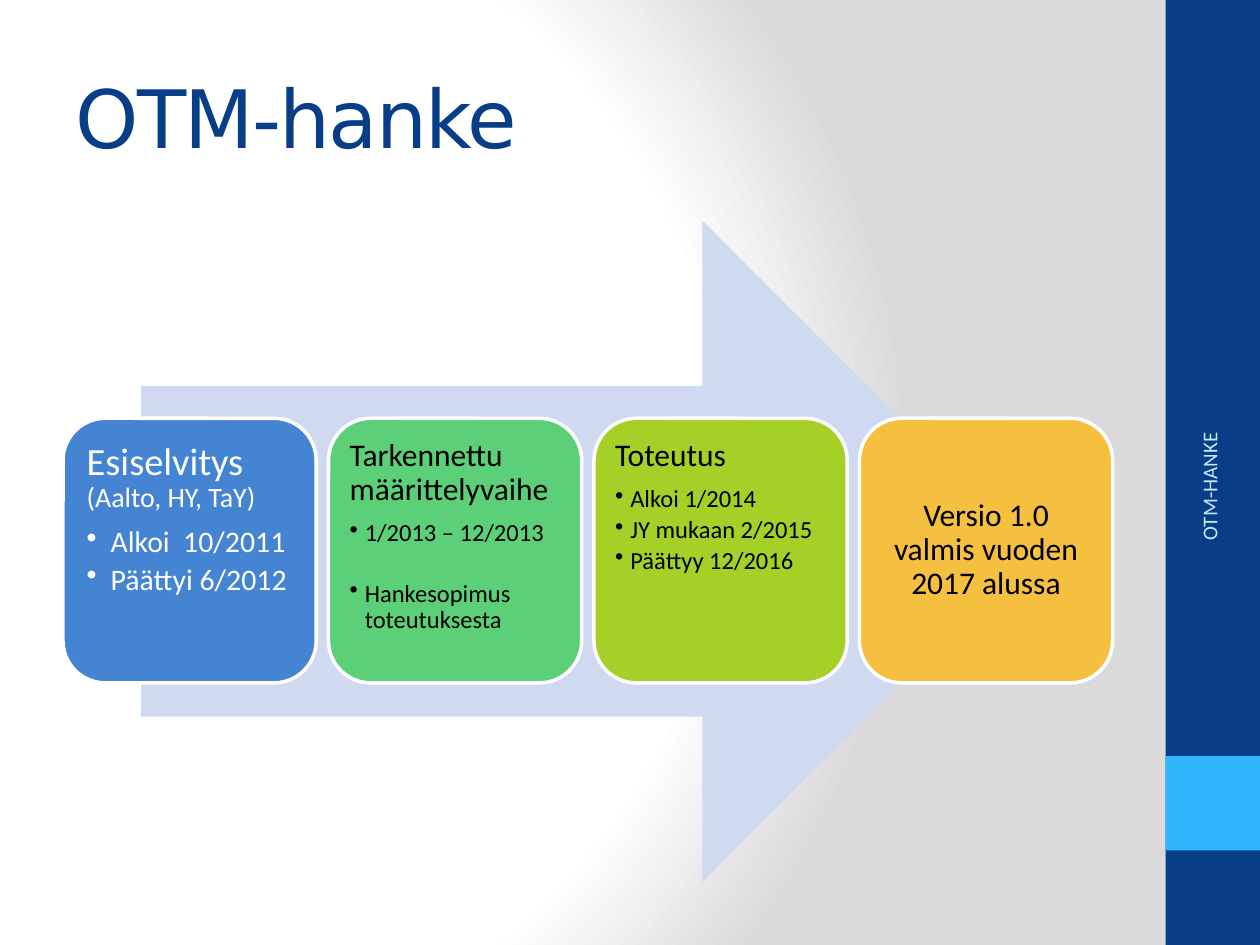
import lxml.etree
import pptx
import pptx.dml.color
import pptx.enum.shapes
import pptx.enum.text
import pptx.oxml.ns
import pptx.util

Inches, Pt = pptx.util.Inches, pptx.util.Pt
RGB = pptx.dml.color.RGBColor
SHAPES = pptx.enum.shapes.MSO_SHAPE
ALIGN = pptx.enum.text.PP_ALIGN
ANCHOR = pptx.enum.text.MSO_ANCHOR
qn = pptx.oxml.ns.qn

NAVY = RGB(0x07, 0x3E, 0x87)
SKY = RGB(0x31, 0xB6, 0xFD)
PALE_BLUE = RGB(0xC6, 0xE7, 0xFC)
ARROW_BLUE = RGB(0xCF, 0xD9, 0xEF)
BLUE = RGB(0x45, 0x84, 0xD3)
GREEN = RGB(0x5B, 0xD0, 0x78)
LIME = RGB(0xA5, 0xD0, 0x28)
AMBER = RGB(0xF5, 0xC0, 0x40)
GREY = RGB(0xDA, 0xDA, 0xDA)
WHITE = RGB(0xFF, 0xFF, 0xFF)
BLACK = RGB(0, 0, 0)


def add_block(kind, left, top, width, height, color):
    block = page.shapes.add_shape(
        kind, Inches(left), Inches(top), Inches(width), Inches(height))
    block.shadow.inherit = False
    block.fill.solid()
    block.fill.fore_color.rgb = color
    block.line.fill.background()
    return block


def add_span(para, text, size, color, font="Calibri"):
    span = para.add_run()
    span.text = text
    for name, value in {"name": font, "size": Pt(size)}.items():
        setattr(span.font, name, value)
    span.font.color.rgb = color
    return span


deck = pptx.Presentation()
deck.slide_width, deck.slide_height = Inches(10), Inches(7.5)
page = deck.slides.add_slide(deck.slide_layouts[5])

# Background: radial gradient, white to grey
page.background.fill.gradient()
gradient = page.element.find(".//" + qn("a:gradFill"))
for child in list(gradient):
    gradient.remove(child)
stops = lxml.etree.SubElement(gradient, qn("a:gsLst"))
for position, color in ((0, WHITE), (75, WHITE), (100, GREY)):
    stop = lxml.etree.SubElement(stops, qn("a:gs"), pos=str(position * 1000))
    lxml.etree.SubElement(stop, qn("a:srgbClr"), val=str(color))
circle = lxml.etree.SubElement(gradient, qn("a:path"), path="circle")
lxml.etree.SubElement(circle, qn("a:fillToRect"),
                      l="20000", t="50000", r="100000", b="50000")

# Side band
add_block(SHAPES.RECTANGLE, 9.25, 0, 0.75, 7.5, NAVY)
add_block(SHAPES.RECTANGLE, 9.25, 6, 0.75, 0.75, SKY)

# Title
title = page.shapes.title
title_place = {"left": 0.5, "top": 0.3, "width": 8.33, "height": 1.25}
for name, value in title_place.items():
    setattr(title, name, Inches(value))
frame = title.text_frame
frame.vertical_anchor = ANCHOR.MIDDLE
frame.auto_size = pptx.enum.text.MSO_AUTO_SIZE.NONE
para = frame.paragraphs[0]
para.alignment = ALIGN.LEFT
span = add_span(para, "OTM-hanke", 46, NAVY, "DejaVu Sans")
span.font._element.set("spc", "-100")

# Arrow behind the phases
add_block(SHAPES.RIGHT_ARROW, 1.12, 1.75, 7.08, 5.25, ARROW_BLUE)

# Phase cards: fill, text colour, inset, heading spans, bullet size, indent,
# bullets with the space after each in points
phases = [
    (BLUE, WHITE, 0.09, [("Esiselvitys ", 22), ("(Aalto, HY, TaY)", 16)],
     17, 0.19, [("Alkoi  10/2011", 3), ("Päättyi 6/2012", 3)]),
    (GREEN, BLACK, 0.07, [("Tarkennettu määrittelyvaihe", 18)],
     14, 0.12, [("1/2013 – 12/2013", 19.5), ("Hankesopimus toteutuksesta", 2.5)]),
    (LIME, BLACK, 0.07, [("Toteutus", 18)],
     14, 0.12, [("Alkoi 1/2014", 2.5), ("JY mukaan 2/2015", 2.5),
                ("Päättyy 12/2016", 2.5)]),
    (AMBER, BLACK, 0.07, [("Versio 1.0 valmis vuoden 2017 alussa", 18)],
     14, 0.12, []),
]
for index, phase in enumerate(phases):
    fill, ink, inset, heading, size, indent, bullets = phase
    card = add_block(SHAPES.ROUNDED_RECTANGLE,
                     0.5 + index * 2.107, 3.32, 2.01, 2.1, fill)
    card.line.color.rgb = WHITE
    card.line.width = Pt(2)
    frame = card.text_frame
    frame.word_wrap = True
    frame.vertical_anchor = ANCHOR.TOP if bullets else ANCHOR.MIDDLE
    for side in ("left", "top", "right", "bottom"):
        setattr(frame, "margin_" + side, Inches(inset))

    para = frame.paragraphs[0]
    heading_format = {"alignment": ALIGN.LEFT if bullets else ALIGN.CENTER,
                      "line_spacing": 0.9, "space_after": Pt(7.5)}
    for name, value in heading_format.items():
        setattr(para, name, value)
    for text, heading_size in heading:
        add_span(para, text, heading_size, ink)

    for text, gap in bullets:
        para = frame.add_paragraph()
        bullet_format = {"alignment": ALIGN.LEFT, "line_spacing": 0.9,
                         "space_after": Pt(gap)}
        for name, value in bullet_format.items():
            setattr(para, name, value)
        properties = para._p.get_or_add_pPr()
        properties.set("marL", str(Inches(indent)))
        properties.set("indent", str(-Inches(indent)))
        lxml.etree.SubElement(properties, qn("a:buChar"), char="•")
        add_span(para, text, size, ink)

# Label running up the side band
label = page.shapes.add_textbox(Inches(8.3), Inches(4.43), Inches(2.59), Inches(0.4))
label.rotation = 270
frame = label.text_frame
frame.word_wrap = True
frame.vertical_anchor = ANCHOR.MIDDLE
para = frame.paragraphs[0]
para.alignment = ALIGN.RIGHT
add_span(para, "OTM-HANKE", 12, PALE_BLUE)

deck.save("out.pptx")
